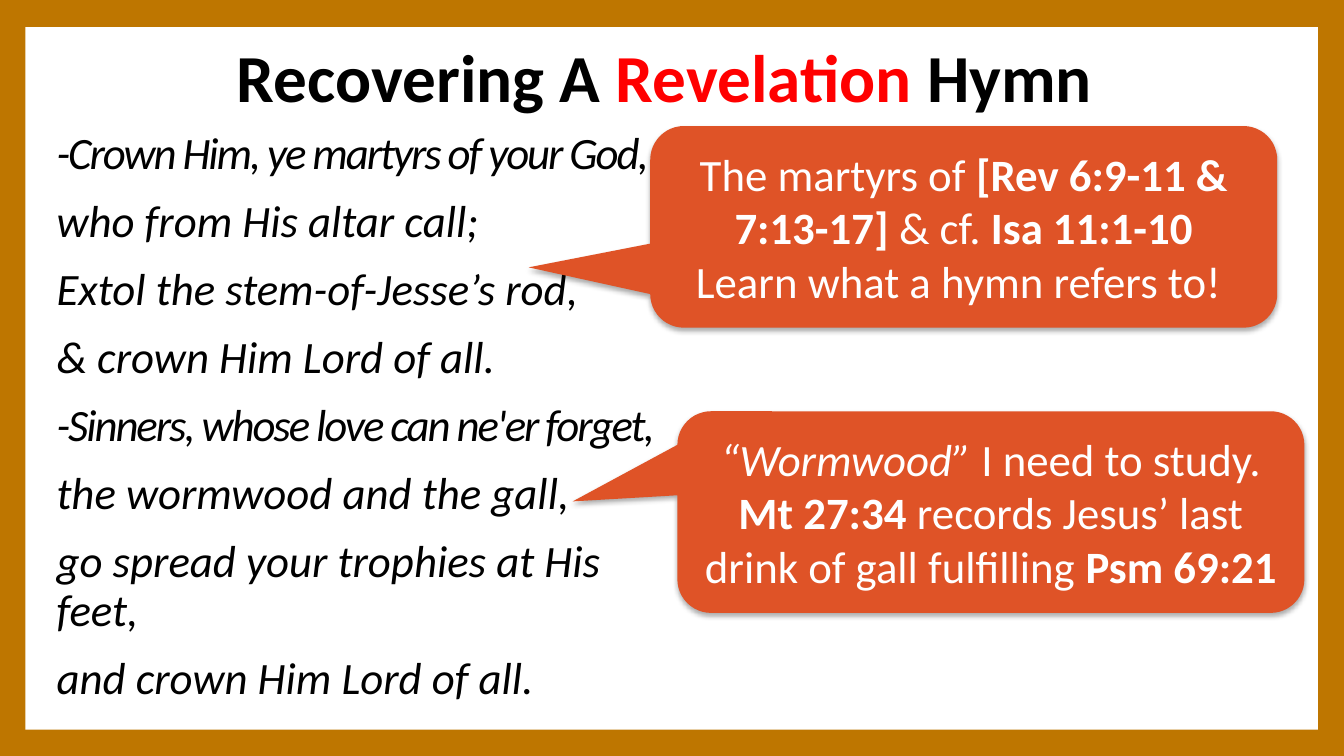
from lxml import etree
from pptx import Presentation
from pptx.dml.color import RGBColor
from pptx.enum.shapes import MSO_SHAPE
from pptx.enum.text import MSO_ANCHOR, MSO_AUTO_SIZE, PP_ALIGN
from pptx.oxml import parse_xml
from pptx.oxml.ns import nsdecls, qn
from pptx.util import Inches, Pt

RECT, BUBBLE = MSO_SHAPE.RECTANGLE, MSO_SHAPE.ROUNDED_RECTANGULAR_CALLOUT
TOP, MIDDLE = MSO_ANCHOR.TOP, MSO_ANCHOR.MIDDLE
LEFT, CENTER = PP_ALIGN.LEFT, PP_ALIGN.CENTER
FIXED = MSO_AUTO_SIZE.NONE

GOLD = RGBColor(0xBE, 0x76, 0x00)
WHITE = RGBColor(0xFF, 0xFF, 0xFF)
BLACK = RGBColor(0x00, 0x00, 0x00)
RED = RGBColor(0xFF, 0x00, 0x00)
ORANGE = RGBColor(0xDF, 0x53, 0x27)

BOLD, ITALIC = {"bold": True}, {"italic": True}
TIGHT = {"track": -1.5}

OUTLINE = (f'<a:ln {nsdecls("a")} w="9525"><a:solidFill>'
           f'<a:srgbClr val="{BLACK}"/></a:solidFill></a:ln>')
SHADOW = (f'<a:effectLst {nsdecls("a")}>'
          '<a:outerShdw blurRad="44450" dist="27940" dir="5400000" algn="ctr" rotWithShape="0">'
          f'<a:srgbClr val="{BLACK}"><a:alpha val="32000"/></a:srgbClr>'
          '</a:outerShdw></a:effectLst>')


def add_run(para, text, size=32, color=BLACK, bold=False, italic=False,
            track=0, outline=False):
    run = para.add_run()
    run.text = text
    font = run.font
    font.name, font.size = "Calibri", Pt(size)
    font.bold, font.italic = bold, italic
    font.color.rgb = color
    props = run._r.get_or_add_rPr()
    if track:
        props.set("spc", str(round(track * 100)))
    if outline:
        props.insert(0, parse_xml(OUTLINE))


class Page:
    def __init__(self, deck):
        self.wide, self.high = deck.slide_width, deck.slide_height
        self.slide = deck.slides.add_slide(deck.slide_layouts[1])
        fill = self.slide.background.fill
        fill.solid()
        fill.fore_color.rgb = GOLD

    def box(self, left, top, width, height):
        """Percent of the slide's size to lengths."""
        return [round(share * side / 100) for share, side in
                zip((left, top, width, height), (self.wide, self.high) * 2)]

    def shape(self, kind, area, color):
        shape = self.slide.shapes.add_shape(kind, *self.box(*area))
        shape.shadow.inherit = False
        shape.fill.solid()
        shape.fill.fore_color.rgb = color
        shape.line.fill.background()
        return shape

    def panel(self, area):
        panel = self.shape(RECT, area, WHITE).element
        panel.getparent().insert(2, panel)

    def set_text(self, shape, paras, anchor=TOP, align=LEFT, line=1.0, gap=0, **style):
        frame = shape.text_frame
        frame.word_wrap, frame.auto_size = True, FIXED
        frame.vertical_anchor = anchor
        for i, runs in enumerate(paras):
            para = frame.add_paragraph() if i else frame.paragraphs[0]
            para.alignment, para.line_spacing = align, line
            para.space_before = Pt(gap if i else 0)
            para.space_after = Pt(0)
            for text, extra in runs:
                add_run(para, text, **{**style, **extra})
        return frame

    def place(self, holder, area):
        holder.left, holder.top, holder.width, holder.height = self.box(*area)
        return holder

    def title(self, area, runs):
        holder = self.place(self.slide.shapes.title, area)
        self.set_text(holder, [runs], MIDDLE, CENTER, 0.9, size=48, bold=True)

    def verses(self, area, lines):
        holder = self.place(self.slide.placeholders[1], area)
        frame = self.set_text(holder, [[line] for line in lines],
                              line=0.9, gap=14, italic=True)
        for para in frame.paragraphs:
            props = para._p.get_or_add_pPr()
            props.set("marL", str(Inches(0.05)))
            props.set("indent", "0")
            etree.SubElement(props, qn("a:buNone"))

    def callout(self, left, top, tip, paras):
        shape = self.shape(BUBBLE, (left, top, 46.65, 26.67), ORANGE)
        for i, value in enumerate((*tip, 0.167)):
            shape.adjustments[i] = value
        props = shape.element.spPr
        props.replace(props.find(qn("a:effectLst")), parse_xml(SHADOW))
        self.set_text(shape, paras, MIDDLE, CENTER, color=WHITE)


def main():
    deck = Presentation()
    deck.slide_width, deck.slide_height = Inches(13.33), Inches(7.5)
    page = Page(deck)

    # Frame and title
    page.panel((1.88, 3.6, 96.17, 92.93))
    page.title((1.88, 4.67, 96.25, 12), [
        ("Recovering A ", {}),
        ("Revelation", {"color": RED, "outline": True}),
        (" Hymn ", {})])

    # Hymn verses
    page.verses((3.08, 16.67, 48.31, 77.73), [
        ("-Crown Him, ye martyrs of your God,", TIGHT),
        ("who from His altar call;", {}),
        ("Extol the stem-of-Jesse’s rod,", {}),
        ("& crown Him Lord of all.", {}),
        ("-Sinners, whose love can ne'er forget,", TIGHT),
        ("the wormwood and the gall,", {}),
        ("go spread your trophies at His feet,", {}),
        ("and crown Him Lord of all.", {})])

    # Notes on the verses
    page.callout(48.38, 16.67, (-0.694, 0.201), [
        [("The martyrs of ", {}), ("[Rev 6:9-11 & 7:13-17]", BOLD),
         (" & cf. ", {}), ("Isa 11:1-10", BOLD)],
        [("Learn what a hymn refers to! ", {})]])
    page.callout(50.4, 54.4, (-0.667, -0.053), [
        [("“Wormwood”", ITALIC), (" I need to study.", {})],
        [("Mt 27:34", BOLD),
         (" records Jesus’ last drink of gall fulfilling ", {}),
         ("Psm 69:21", BOLD)]])

    deck.save("out.pptx")


if __name__ == "__main__":
    main()
